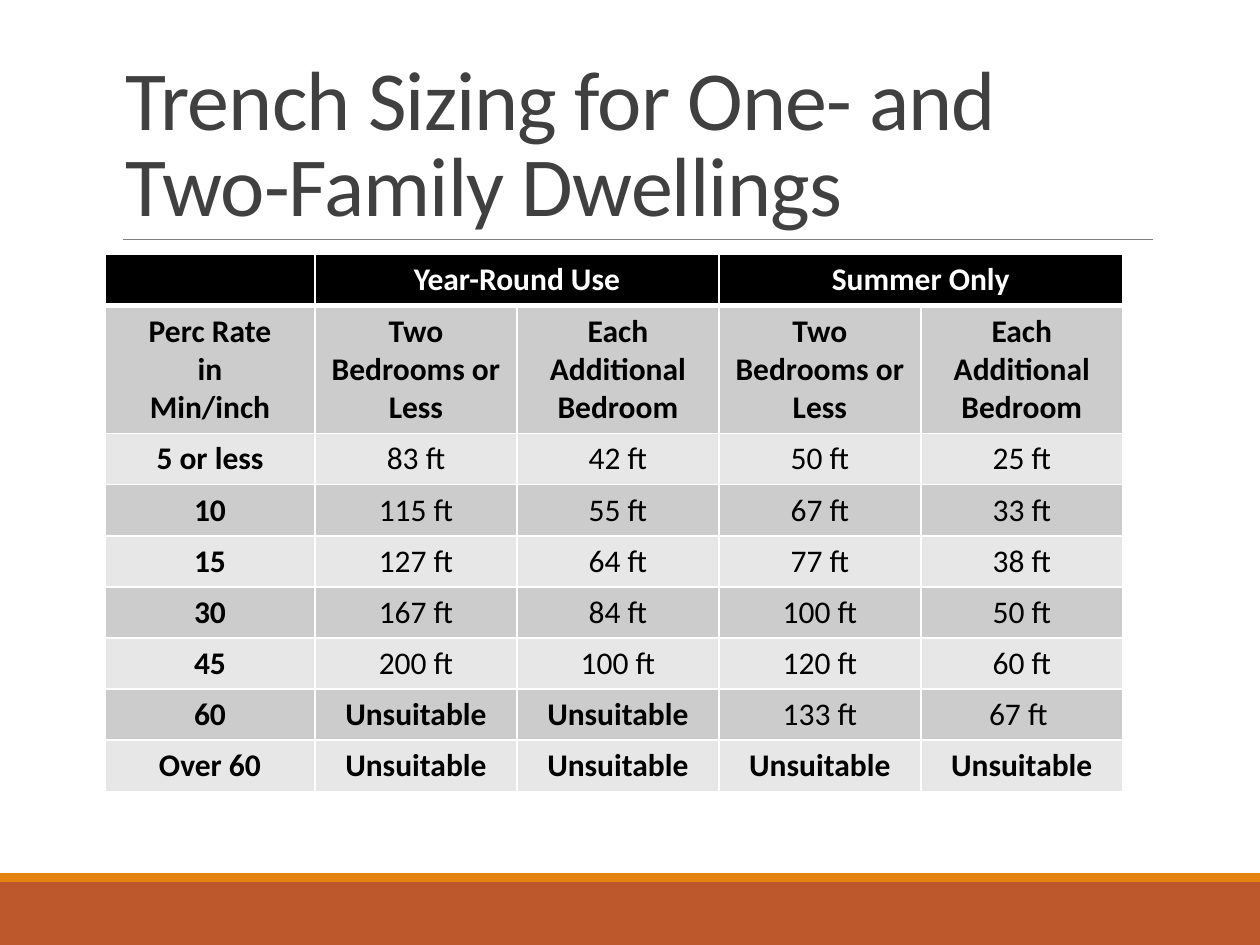
from typing import NamedTuple

from lxml.etree import SubElement
from pptx import Presentation
from pptx.dml.color import RGBColor
from pptx.enum.shapes import MSO_CONNECTOR, MSO_SHAPE
from pptx.enum.text import MSO_ANCHOR, PP_ALIGN
from pptx.oxml.ns import qn
from pptx.util import Pt

FONT = "Calibri"
BLACK, WHITE = "000000", "FFFFFF"
BANDS = ("CCCCCC", "E7E7E7")
UNSUITABLE = "Unsuitable"
HEADING_PAIR = ["Two Bedrooms or Less", "Each Additional Bedroom"]
ROWS = [
    ["", "Year-Round Use", "", "Summer Only", ""],
    ["Perc Rate\nin\nMin/inch", *HEADING_PAIR * 2],
    ["5 or less", "83 ft", "42 ft", "50 ft", "25 ft"],
    ["10", "115 ft", "55 ft", "67 ft", "33 ft"],
    ["15", "127 ft", "64 ft", "77 ft", "38 ft"],
    ["30", "167 ft", "84 ft", "100 ft", "50 ft"],
    ["45", "200 ft", "100 ft", "120 ft", "60 ft"],
    ["60", UNSUITABLE, UNSUITABLE, "133 ft", "67 ft "],
    ["Over 60", *[UNSUITABLE] * 4],
]
COLUMN_WIDTHS = [120, 115.4, 115.4, 115.4, 115.4]
ROW_HEIGHTS = [29.2, 73.1] + [29.2] * 7


class Band(NamedTuple):
    top: float
    height: float
    color: str


FOOTER_BANDS = [Band(504, 36, "BD582C"), Band(499, 5, "E48312")]


def rgb(color: str) -> RGBColor:
    return RGBColor.from_string(color)


def add_band(s, band: Band) -> None:
    sp = s.shapes.add_shape(
        MSO_SHAPE.RECTANGLE, 0, Pt(band.top), Pt(720), Pt(band.height))
    sp.shadow.inherit = False
    sp.fill.solid()
    sp.fill.fore_color.rgb = rgb(band.color)
    sp.line.fill.background()


def add_title_rule(s) -> None:
    line = s.shapes.add_connector(
        MSO_CONNECTOR.STRAIGHT, Pt(70.5), Pt(136.8), Pt(658.8), Pt(136.8))
    line.line.color.rgb = rgb("808080")
    line.line.width = Pt(0.5)
    SubElement(line._element.spPr, qn("a:effectLst"))


def add_title(s, text: str) -> None:
    tf = s.shapes.add_textbox(Pt(64.8), Pt(22.3), Pt(594), Pt(114.5)).text_frame
    tf.word_wrap = True
    tf.vertical_anchor = MSO_ANCHOR.BOTTOM
    p = tf.paragraphs[0]
    p.line_spacing = 0.85
    r = p.add_run()
    r.text = text
    r.font.name = FONT
    r.font.size = Pt(48)
    r.font.color.rgb = rgb("404040")
    r._r.get_or_add_rPr().set("spc", "-50")


def set_borders(cell, top: float, bottom: float) -> None:
    """Give a cell white borders; must run before its fill is set."""
    tc_pr = cell._tc.get_or_add_tcPr()
    for side, width in (("L", 1), ("R", 1), ("T", top), ("B", bottom)):
        ln = SubElement(tc_pr, qn(f"a:ln{side}"), w=str(Pt(width)))
        fill = SubElement(ln, qn("a:solidFill"))
        SubElement(fill, qn("a:srgbClr"), val=WHITE)


def fill_cell(cell, text: str, row: int, column: int) -> None:
    set_borders(cell, top=3 if row == 1 else 1, bottom=3 if row == 0 else 1)
    cell.fill.solid()
    cell.fill.fore_color.rgb = rgb(BANDS[(row - 1) % 2] if row else BLACK)
    cell.text = text
    for p in cell.text_frame.paragraphs:
        p.alignment = PP_ALIGN.CENTER
        p.font.name = FONT
        p.font.size = Pt(18)
        p.font.bold = row < 2 or column == 0 or text == UNSUITABLE
        p.font.color.rgb = rgb(BLACK if row else WHITE)


def add_sizing_table(s) -> None:
    table = s.shapes.add_table(
        len(ROWS), len(COLUMN_WIDTHS), Pt(60), Pt(145.5),
        Pt(sum(COLUMN_WIDTHS)), Pt(sum(ROW_HEIGHTS))).table
    for column, width in zip(table.columns, COLUMN_WIDTHS):
        column.width = Pt(width)
    for row, height in zip(table.rows, ROW_HEIGHTS):
        row.height = Pt(height)
    for i, texts in enumerate(ROWS):
        for j, text in enumerate(texts):
            fill_cell(table.cell(i, j), text, i, j)
    for j in (1, 3):
        table.cell(0, j).merge(table.cell(0, j + 1))


def main() -> None:
    prs = Presentation()
    prs.slide_width, prs.slide_height = Pt(720), Pt(540)
    s = prs.slides.add_slide(prs.slide_layouts[6])
    for band in FOOTER_BANDS:
        add_band(s, band)
    add_title_rule(s)
    add_title(s, "Trench Sizing for One- and Two-Family Dwellings")
    add_sizing_table(s)
    prs.save("out.pptx")


if __name__ == "__main__":
    main()
